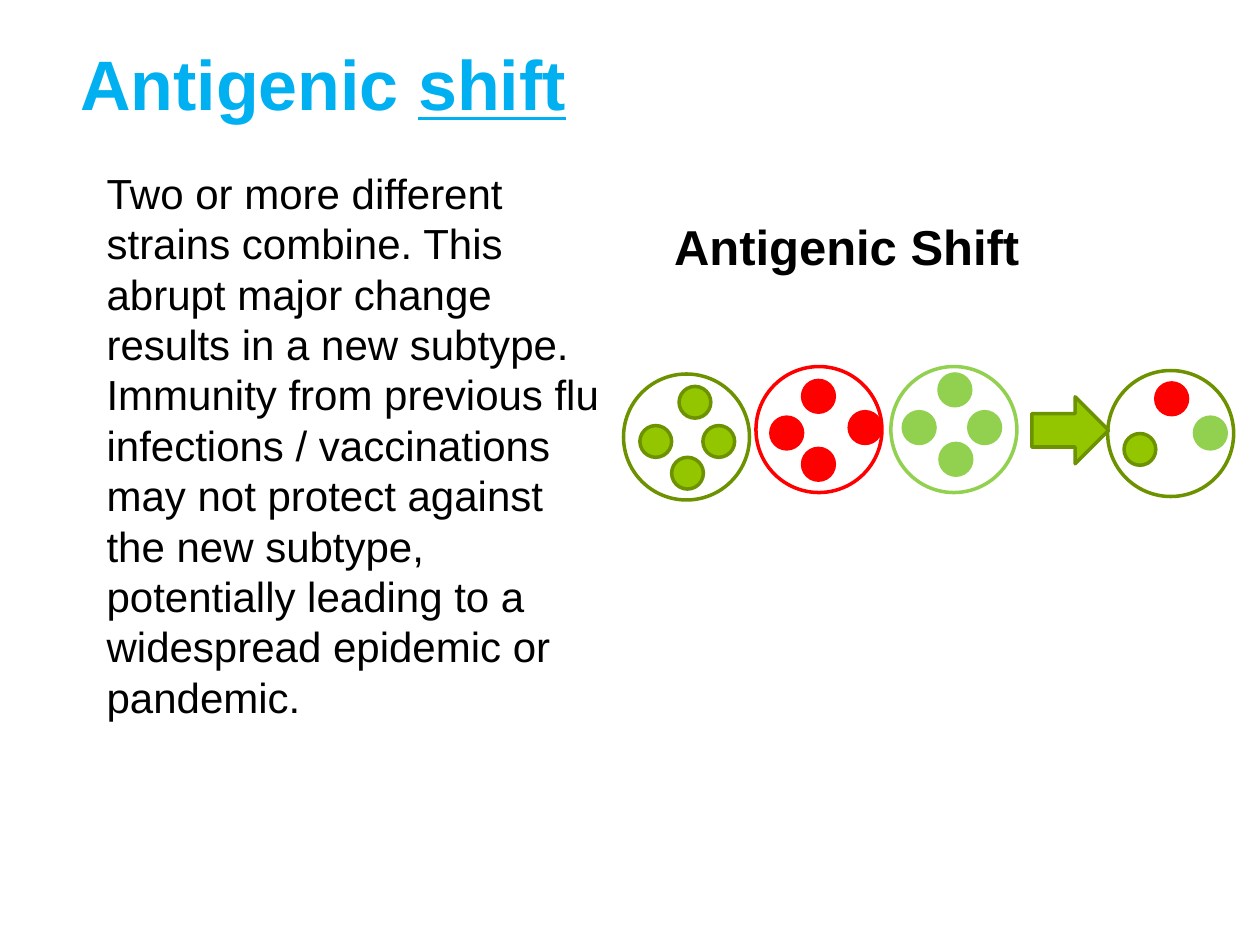
from pptx import Presentation
from pptx.dml.color import RGBColor
from pptx.enum.shapes import MSO_SHAPE
from pptx.enum.text import MSO_ANCHOR
from pptx.util import Cm, Pt

RING, DOT = 2.54, 0.64

# Strain colours: (fill, line)
OLIVE = ("94C600", "6D9200")
RED = ("FF0000", "FF0000")
LIGHT = ("92D050", "92D050")


def rgb(value):
    return RGBColor.from_string(value)


class SlideBuilder:
    font = "Arial"
    line_width = 2

    def __init__(self, slide):
        self.slide = slide

    def text(self, box, runs, size, color="000000", bold=False,
             anchor=MSO_ANCHOR.TOP, spacing=None):
        """Add one paragraph; runs are (text, underline) pairs."""
        tf = self.slide.shapes.add_textbox(*map(Cm, box)).text_frame
        tf.word_wrap = True
        tf.vertical_anchor = anchor
        p = tf.paragraphs[0]
        if spacing:
            p.line_spacing = Pt(spacing)
        for content, underline in runs:
            r = p.add_run()
            r.text = content
            formats = {"name": self.font, "size": Pt(size), "bold": bold,
                       "underline": underline}
            for name, value in formats.items():
                setattr(r.font, name, value)
            r.font.color.rgb = rgb(color)

    def shape(self, kind, box, line, fill=None):
        sp = self.slide.shapes.add_shape(kind, *map(Cm, box))
        sp.shadow.inherit = False
        if fill:
            sp.fill.solid()
            sp.fill.fore_color.rgb = rgb(fill)
        else:
            sp.fill.background()
        sp.line.color.rgb = rgb(line)
        sp.line.width = Pt(self.line_width)

    def virus(self, left, top, strain, dots):
        """Add a ring with dots given as (x, y, strain) from its corner."""
        self.shape(MSO_SHAPE.OVAL, (left, top, RING, RING), strain[1])
        for x, y, (fill, line) in dots:
            self.shape(MSO_SHAPE.FLOWCHART_CONNECTOR,
                       (left + x, top + y, DOT, DOT), line, fill)


def main():
    prs = Presentation()
    prs.slide_width, prs.slide_height = Cm(25.4), Cm(19.05)
    s = SlideBuilder(prs.slides.add_slide(prs.slide_layouts[6]))

    # Title and text
    s.text((1.37, 0.08, 22.43, 3.18), [("Antigenic ", False), ("shift", True)],
           40, "00B0F0", bold=True, anchor=MSO_ANCHOR.MIDDLE)
    s.text((1.9, 3.25, 10.64, 11.07), [(
        "Two or more different strains combine. This abrupt major change "
        "results in a new subtype. Immunity from previous flu infections / "
        "vaccinations may not protect against the new subtype, potentially "
        "leading to a widespread epidemic or pandemic.", False)],
        24, spacing=28.8)
    s.text((13.34, 4.24, 11, 11.23), [("Antigenic Shift", False)],
           28, bold=True, spacing=33.6)

    # Parent strains
    parents = [
        (12.57, 7.54, OLIVE,
         [(0.33, 1.04), (0.97, 1.68), (1.6, 1.04), (1.12, 0.25)]),
        (15.24, 7.39, RED,
         [(0.3, 1.02), (0.94, 1.65), (1.88, 0.91), (0.94, 0.28)]),
        (17.96, 7.39, LIGHT,
         [(0.25, 0.91), (0.99, 1.55), (1.57, 0.91), (0.97, 0.15)]),
    ]
    for left, top, strain, spots in parents:
        s.virus(left, top, strain, [(x, y, strain) for x, y in spots])

    # Arrow to the new subtype
    s.shape(MSO_SHAPE.RIGHT_ARROW, (20.8, 8, 1.55, 1.35), OLIVE[1], OLIVE[0])
    s.virus(22.33, 7.47, OLIVE,
            [(0.97, 0.25, RED), (0.33, 1.27, OLIVE), (1.75, 0.94, LIGHT)])

    prs.save("out.pptx")


if __name__ == "__main__":
    main()
